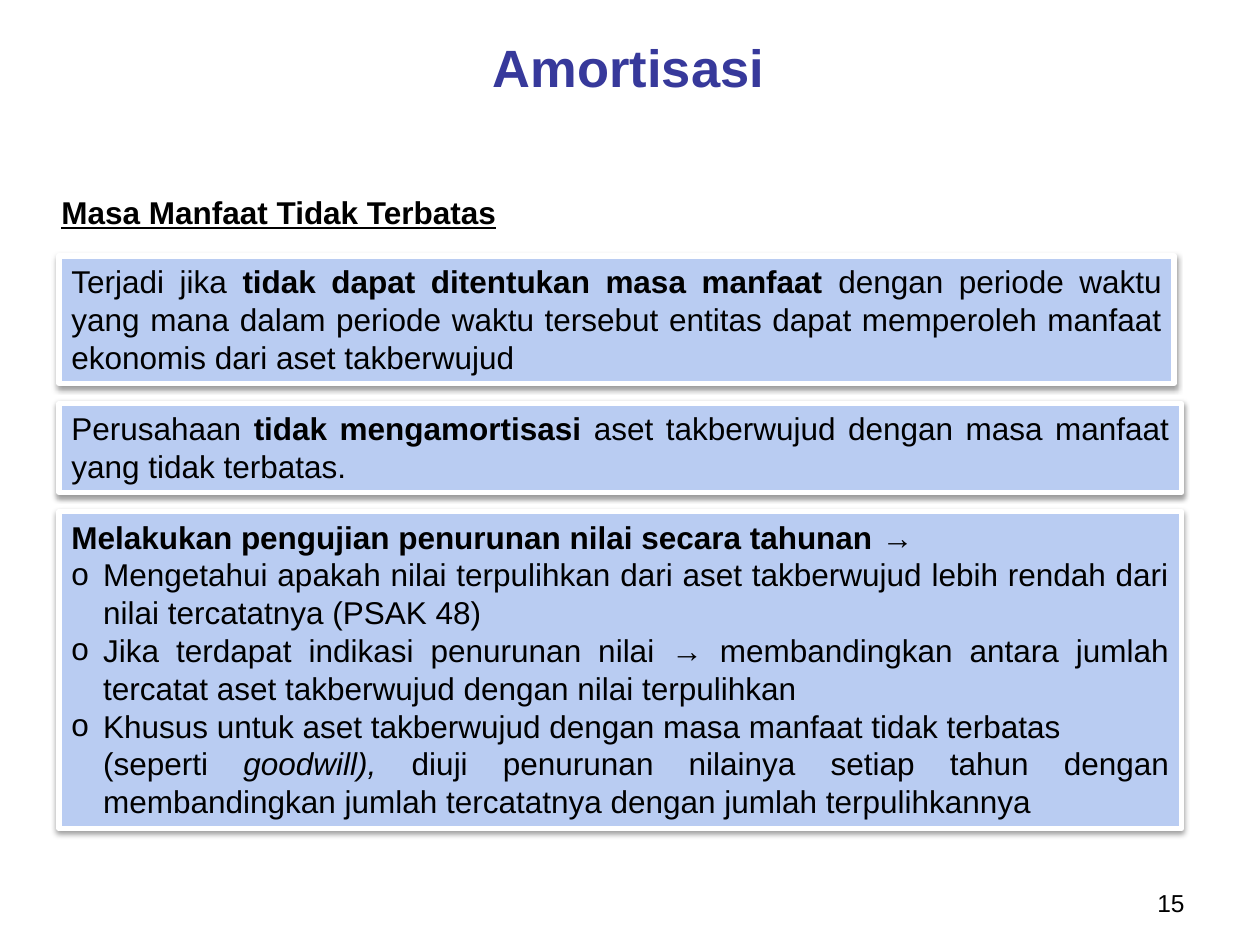
from dataclasses import dataclass, field

from lxml import etree
from pptx import Presentation
from pptx import util as u
from pptx.dml.color import RGBColor
from pptx.enum import shapes, text
from pptx.oxml.ns import qn

FONT = "Arial"
BLACK, WHITE, PANEL_BLUE, TITLE_BLUE = "000000", "FFFFFF", "B9CCF2", "37399B"
PANEL_LEFT = 1.19
HANGING = u.Cm(0.64)


@dataclass
class Run:
    text: str
    bold: bool = False
    italic: bool = False


@dataclass
class Line:
    runs: list[Run]
    bullet: bool = False
    indented: bool = False


@dataclass
class Panel:
    top: float
    width: float
    height: float
    lines: list[Line] = field(default_factory=list)


PANELS = [
    Panel(5.16, 22.48, 2.57, [
        Line([Run("Terjadi jika "),
              Run("tidak dapat ditentukan masa manfaat ", bold=True),
              Run("dengan periode waktu yang mana dalam periode waktu tersebut "
                  "entitas dapat memperoleh manfaat ekonomis dari aset takberwujud")]),
    ]),
    Panel(8.13, 22.63, 1.8, [
        Line([Run("Perusahaan "),
              Run("tidak mengamortisasi ", bold=True),
              Run("aset takberwujud dengan masa manfaat yang tidak terbatas.")]),
    ]),
    Panel(10.31, 22.63, 6.4, [
        Line([Run("Melakukan pengujian penurunan nilai secara tahunan ", bold=True),
              Run("→")]),
        Line([Run("Mengetahui apakah nilai terpulihkan dari aset takberwujud "
                  "lebih rendah dari nilai tercatatnya (PSAK 48)")], bullet=True),
        Line([Run("Jika terdapat indikasi penurunan nilai → membandingkan antara "
                  "jumlah tercatat aset takberwujud dengan nilai terpulihkan")], bullet=True),
        Line([Run("Khusus untuk aset takberwujud dengan masa manfaat tidak terbatas")],
             bullet=True),
        Line([Run("(seperti "),
              Run("goodwill), ", italic=True),
              Run("diuji penurunan nilainya setiap tahun dengan membandingkan "
                  "jumlah tercatatnya dengan jumlah terpulihkannya")], indented=True),
    ]),
]


def color(value: str) -> RGBColor:
    return RGBColor.from_string(value)


def format_font(font, size: float, value: str = BLACK, bold: bool = False) -> None:
    font.name = FONT
    font.size = u.Pt(size)
    font.bold = bold
    font.color.rgb = color(value)


def set_indent(paragraph, bullet: bool) -> None:
    properties = paragraph._p.get_or_add_pPr()
    properties.set("marL", str(HANGING))
    properties.set("indent", str(-HANGING if bullet else 0))
    if bullet:
        etree.SubElement(properties, qn("a:buFont"), typeface=FONT)
        etree.SubElement(properties, qn("a:buChar"), char="o")


def add_shadow(shape) -> None:
    shape.shadow.inherit = False
    effects = shape._element.spPr.find(qn("a:effectLst"))
    shadow = etree.SubElement(effects, qn("a:outerShdw"), blurRad=str(u.Pt(3.1)),
                              dist=str(u.Pt(1.6)), dir="5400000", rotWithShape="0")
    shade = etree.SubElement(shadow, qn("a:srgbClr"), val=BLACK)
    etree.SubElement(shade, qn("a:alpha"), val="38000")


def add_panel(slide, panel: Panel) -> None:
    shape = slide.shapes.add_shape(
        shapes.MSO_SHAPE.RECTANGLE, u.Cm(PANEL_LEFT), u.Cm(panel.top),
        u.Cm(panel.width), u.Cm(panel.height))
    add_shadow(shape)
    shape.fill.solid()
    shape.fill.fore_color.rgb = color(PANEL_BLUE)
    shape.line.color.rgb = color(WHITE)
    shape.line.width = u.Pt(3)
    frame = shape.text_frame
    frame.word_wrap = True
    frame.vertical_anchor = text.MSO_ANCHOR.TOP
    for index, line in enumerate(panel.lines):
        paragraph = frame.add_paragraph() if index else frame.paragraphs[0]
        paragraph.alignment = text.PP_ALIGN.JUSTIFY
        if line.bullet or line.indented:
            set_indent(paragraph, line.bullet)
        for part in line.runs:
            run = paragraph.add_run()
            run.text = part.text
            format_font(run.font, 18, bold=part.bold)
            run.font.italic = part.italic


def add_label(slide, label: str, left: float, top: float, width: float, height: float,
              size: float, alignment, bold: bool = False):
    box = slide.shapes.add_textbox(u.Cm(left), u.Cm(top), u.Cm(width), u.Cm(height))
    frame = box.text_frame
    frame.word_wrap = True
    frame.text = label
    paragraph = frame.paragraphs[0]
    paragraph.alignment = alignment
    format_font(paragraph.runs[0].font, size, bold=bold)
    return paragraph.runs[0]


def add_title(slide, label: str) -> None:
    title = slide.shapes.title
    title.left, title.top = u.Cm(1.24), u.Cm(0.56)
    title.width, title.height = u.Cm(22.86), u.Cm(1.57)
    frame = title.text_frame
    frame.text = label
    frame.vertical_anchor = text.MSO_ANCHOR.MIDDLE
    frame.paragraphs[0].alignment = text.PP_ALIGN.CENTER
    format_font(frame.paragraphs[0].runs[0].font, 30, TITLE_BLUE, bold=True)


def main() -> None:
    presentation = Presentation()
    presentation.slide_width, presentation.slide_height = u.Cm(25.4), u.Cm(19.05)
    slide = presentation.slides.add_slide(presentation.slide_layouts[5])

    # Title, section heading and page number
    add_title(slide, "Amortisasi")
    heading = add_label(slide, "Masa Manfaat Tidak Terbatas", 0.99, 3.76, 10.11, 1.02,
                        18, text.PP_ALIGN.LEFT, bold=True)
    heading.font.underline = True
    add_label(slide, "15", 18.21, 17.78, 5.92, 0.89, 14, text.PP_ALIGN.RIGHT)

    # Explanation panels
    for panel in PANELS:
        add_panel(slide, panel)

    presentation.save("out.pptx")


if __name__ == "__main__":
    main()
